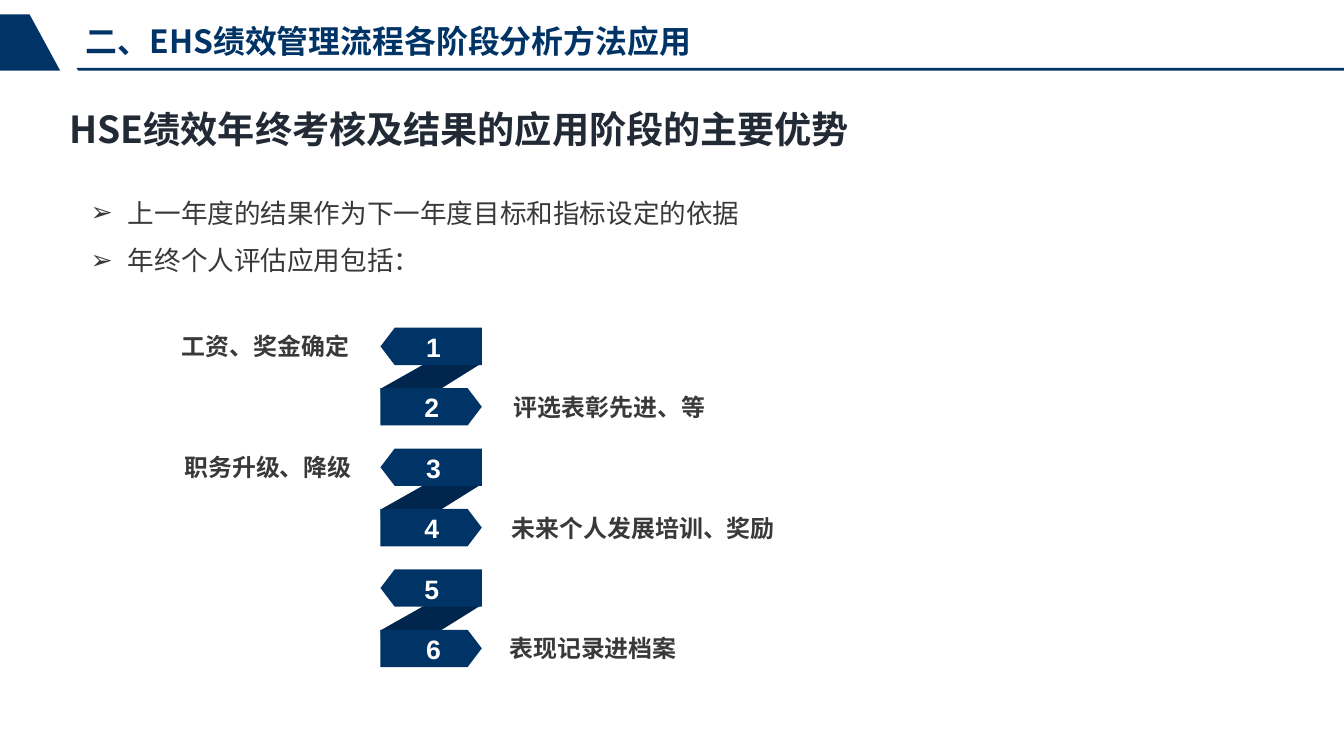
from dataclasses import dataclass
from typing import Any, NamedTuple, Optional

from lxml import etree
from pptx import Presentation
from pptx import util as u
from pptx.dml.color import RGBColor
from pptx.enum import shapes, text
from pptx.oxml import ns


@dataclass(frozen=True)
class Theme:
    navy: str = "003366"
    fold: str = "00264D"
    heading: str = "222A35"
    body: str = "3B3838"
    white: str = "FFFFFF"
    chinese: str = "Noto Sans CJK SC"
    latin: str = "Arial"
    title_size: float = 24
    heading_size: float = 28
    body_size: float = 20
    label_size: float = 18
    number_size: float = 20


class Frame(NamedTuple):
    left: float
    top: float
    width: float
    height: float

    def lengths(self) -> list[u.Length]:
        return [u.Pt(value) for value in self]


class Style(NamedTuple):
    size: float
    color: str
    font: str
    bold: bool = True
    leading: Optional[float] = None
    align: text.PP_ALIGN = text.PP_ALIGN.LEFT
    wrap: bool = True
    bullet: Optional[str] = None


class Label(NamedTuple):
    wording: str
    left: float
    width: float


class Step(NamedTuple):
    number_left: float
    label: Optional[Label] = None


THEME = Theme()
TITLE = Style(THEME.title_size, THEME.navy, THEME.chinese, leading=30)
HEADING = Style(THEME.heading_size, THEME.heading, THEME.chinese, leading=35)
BODY = Style(THEME.body_size, THEME.body, THEME.chinese, bold=False, leading=36, bullet="➢")
LABEL = Style(THEME.label_size, THEME.body, THEME.chinese, leading=22.5,
              align=text.PP_ALIGN.CENTER)
NUMBER = Style(THEME.number_size, THEME.white, THEME.latin, wrap=False)

PAGE_WIDTH, PAGE_HEIGHT = 1012.32, 569.52
PLATE = Frame(286.6, 246.9, 76.3, 28.1)
STEP_PITCH = 45.5
PLATE_POINT = 0.38
BULLET_INDENT = 28

HEADER_RULE = [(57.6, 51.1), (PAGE_WIDTH, 51.1), (PAGE_WIDTH, 53.3), (59, 53.3)]
HEADER_TAB = [(22.3, 10.8), (45.4, 53.3), (0, 53.3), (0, 10.8)]
FOLD = [(1.4, 73.5), (76.3, 26.7), (76.3, 2.9), (0, 46)]

STEPS = [
    Step(313.9, Label("工资、奖金确定", 126.7, 146.2)),
    Step(312.5, Label("评选表彰先进、等", 345.6, 226.8)),
    Step(313.9, Label("职务升级、降级", 131, 141.8)),
    Step(312.5, Label("未来个人发展培训、奖励", 363.6, 241.9)),
    Step(312.5),
    Step(313.9, Label("表现记录进档案", 375.8, 141.8)),
]


def apply(target: Any, formats: dict[str, Any]) -> None:
    for name, value in formats.items():
        setattr(target, name, value)


def paint(shape: Any, color: str) -> None:
    shape.shadow.inherit = False
    shape.fill.solid()
    shape.fill.fore_color.rgb = RGBColor.from_string(color)
    shape.line.fill.background()


def add_outline(page: Any, points: list[tuple[float, float]], color: str) -> None:
    start, *others = [(u.Pt(x), u.Pt(y)) for x, y in points]
    builder = page.shapes.build_freeform(*start, scale=1.0)
    builder.add_line_segments(others, close=True)
    paint(builder.convert_to_shape(), color)


def add_bullet(para: Any, mark: str, color: str) -> None:
    properties = para._p.get_or_add_pPr()
    indent = u.Pt(BULLET_INDENT)
    properties.set("marL", str(indent))
    properties.set("indent", str(-indent))
    bullet_color = etree.SubElement(properties, ns.qn("a:buClr"))
    etree.SubElement(bullet_color, ns.qn("a:srgbClr")).set("val", color)
    etree.SubElement(properties, ns.qn("a:buFont")).set("typeface", THEME.latin)
    etree.SubElement(properties, ns.qn("a:buChar")).set("char", mark)


def add_text(page: Any, frame: Frame, lines: list[str], style: Style) -> None:
    box = page.shapes.add_textbox(*frame.lengths())
    apply(box.text_frame, {
        "word_wrap": style.wrap,
        "auto_size": text.MSO_AUTO_SIZE.SHAPE_TO_FIT_TEXT,
    })
    for index, line in enumerate(lines):
        para = box.text_frame.add_paragraph() if index else box.text_frame.paragraphs[0]
        spacing = u.Pt(style.leading) if style.leading else None
        apply(para, {"alignment": style.align, "line_spacing": spacing})
        if style.bullet:
            add_bullet(para, style.bullet, style.color)
        span = para.add_run()
        span.text = line
        apply(span.font, {"size": u.Pt(style.size), "bold": style.bold, "name": style.font})
        span.font.color.rgb = RGBColor.from_string(style.color)
        east_asian = etree.SubElement(span._r.get_or_add_rPr(), ns.qn("a:ea"))
        east_asian.set("typeface", style.font)


def add_header(page: Any) -> None:
    add_outline(page, HEADER_RULE, THEME.navy)
    add_outline(page, HEADER_TAB, THEME.navy)
    add_text(page, Frame(57.6, 11.5, 635.8, 36), ["二、EHS绩效管理流程各阶段分析方法应用"], TITLE)
    add_text(page, Frame(45.4, 74.9, 620, 41), ["HSE绩效年终考核及结果的应用阶段的主要优势"], HEADING)


def add_plate(page: Any, top: float, points_left: bool) -> None:
    frame = PLATE._replace(top=top)
    plate = page.shapes.add_shape(shapes.MSO_SHAPE.PENTAGON, *frame.lengths())
    plate.adjustments[0] = PLATE_POINT
    plate.rotation = 180 if points_left else 0
    paint(plate, THEME.navy)


def add_ribbon(page: Any) -> None:
    tops = [PLATE.top + index * STEP_PITCH for index in range(len(STEPS))]
    for top in tops[::2]:
        add_outline(page, [(PLATE.left + x, top + y) for x, y in FOLD], THEME.fold)
    for index, (top, step) in enumerate(zip(tops, STEPS)):
        add_plate(page, top, points_left=index % 2 == 0)
        add_text(page, Frame(step.number_left, top - 1.2, 23, 31.5), [str(index + 1)], NUMBER)
        if step.label:
            frame = Frame(step.label.left, top - 1.2, step.label.width, 29)
            add_text(page, frame, [step.label.wording], LABEL)


def main() -> None:
    deck = Presentation()
    apply(deck, {"slide_width": u.Pt(PAGE_WIDTH), "slide_height": u.Pt(PAGE_HEIGHT)})
    page = deck.slides.add_slide(deck.slide_layouts[6])
    add_header(page)
    add_text(page, Frame(61.2, 132.5, 527, 80),
             ["上一年度的结果作为下一年度目标和指标设定的依据", "年终个人评估应用包括："], BODY)
    add_ribbon(page)
    deck.save("out.pptx")


if __name__ == "__main__":
    main()
